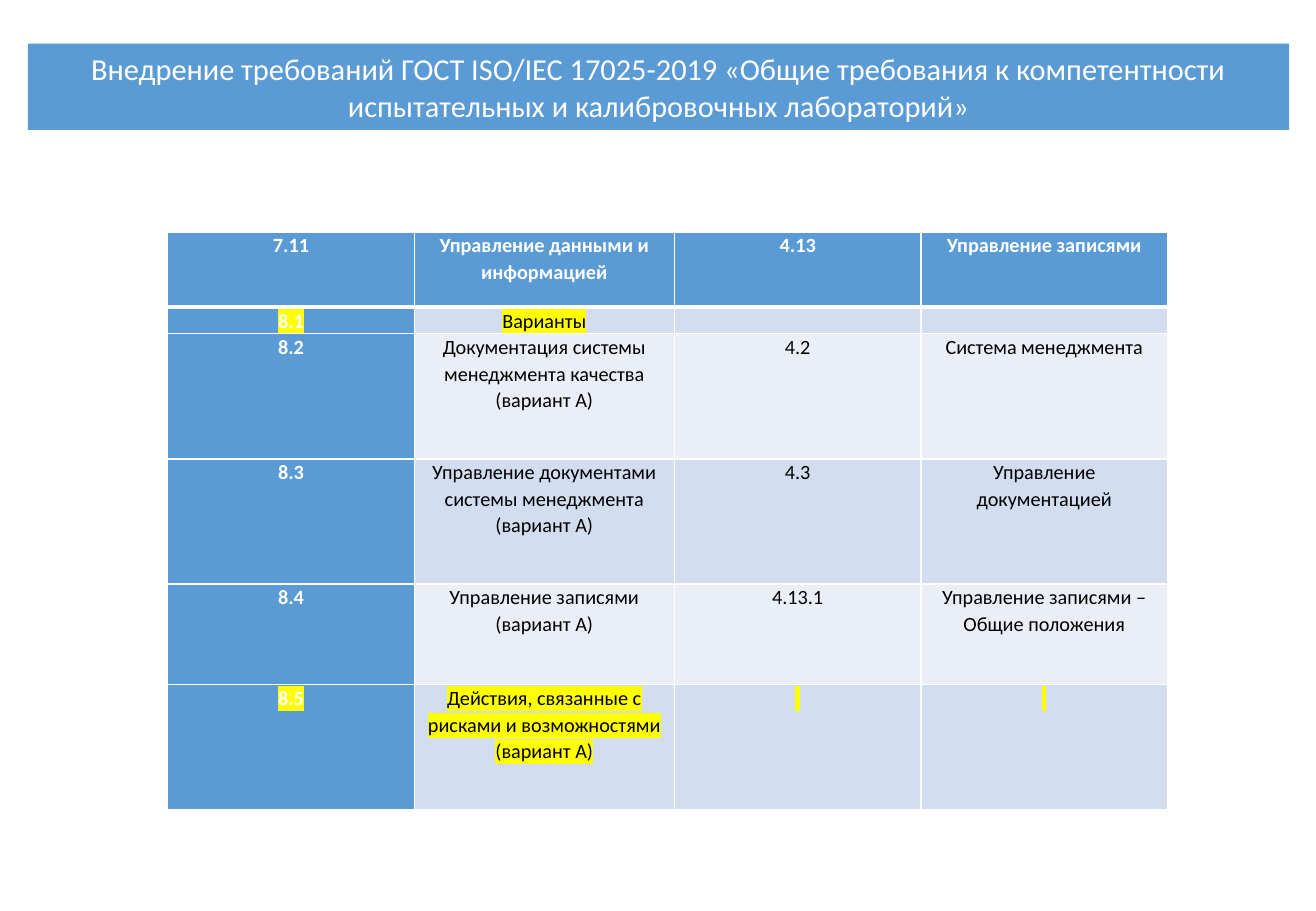
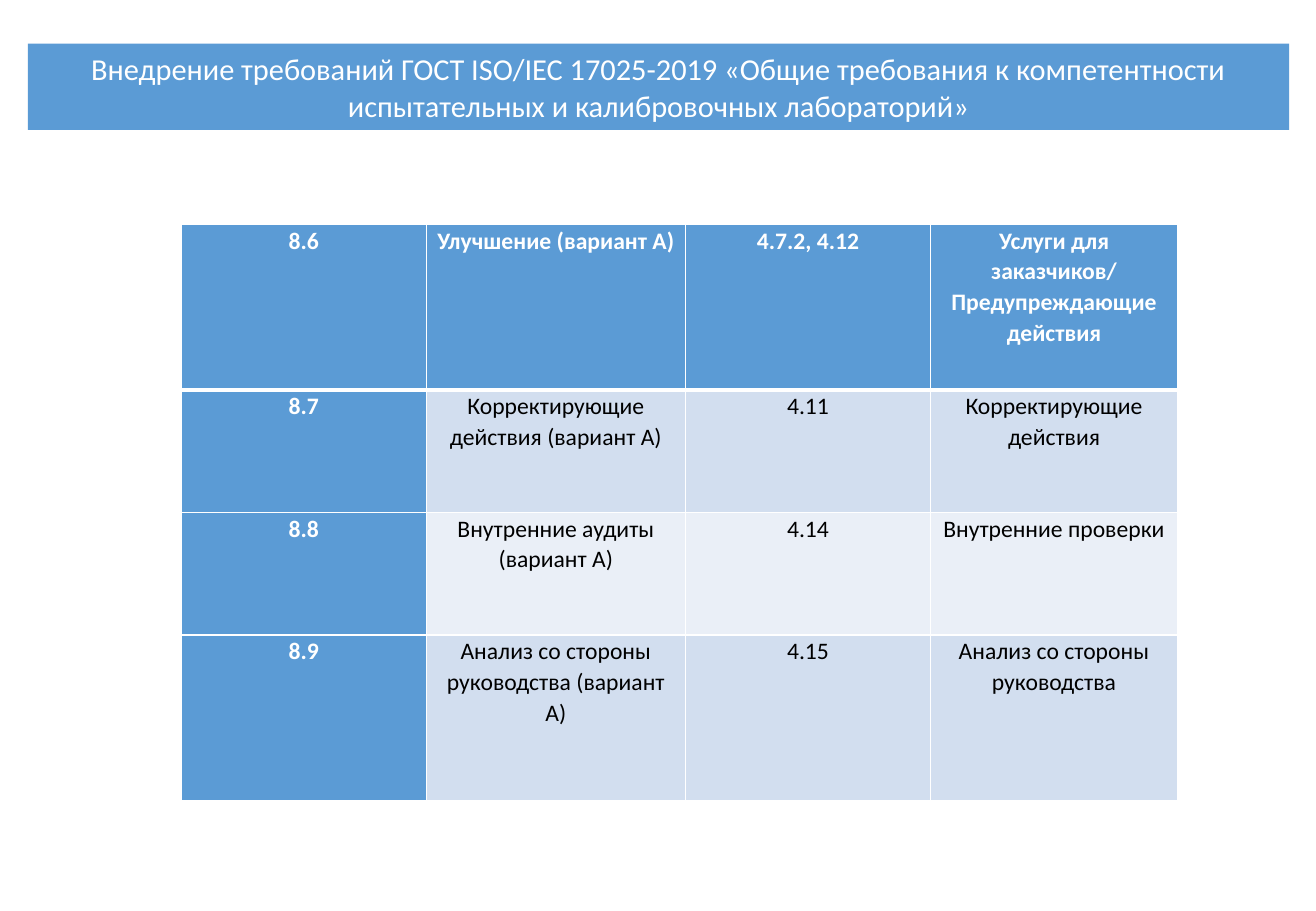
from lxml.etree import SubElement
from pptx import Presentation
from pptx.dml.color import RGBColor
from pptx.enum.text import MSO_ANCHOR, MSO_AUTO_SIZE, PP_ALIGN
from pptx.oxml.ns import qn
from pptx.util import Emu, Pt

PX = 9144
FONT = "Calibri"
BLUE = RGBColor(0x5B, 0x9B, 0xD5)
DARK_BAND = RGBColor(0xD2, 0xDE, 0xEF)
LIGHT_BAND = RGBColor(0xEA, 0xEF, 0xF7)
WHITE = RGBColor(0xFF, 0xFF, 0xFF)
BLACK = RGBColor(0x00, 0x00, 0x00)
YELLOW = RGBColor(0xFF, 0xFF, 0x00)

TITLE = (
    "Внедрение требований ГОСТ ISO/IEC 17025-2019 «Общие требования к "
    "компетентности испытательных и калибровочных лабораторий»"
)

MANAGEMENT_ROWS = [
    ("7.11", "Управление данными и информацией", "4.13", "Управление записями"),
    ("8.1", "Варианты", "", ""),
    ("8.2", "Документация системы менеджмента качества (вариант А)", "4.2",
     "Система менеджмента"),
    ("8.3", "Управление документами системы менеджмента (вариант А)", "4.3",
     "Управление документацией"),
    ("8.4", "Управление записями (вариант А)", "4.13.1",
     "Управление записями – Общие положения"),
    ("8.5", "Действия, связанные с рисками и возможностями (вариант А)", " ", " "),
]

IMPROVEMENT_ROWS = [
    ("8.6", "Улучшение (вариант А)", "4.7.2, 4.12",
     "Услуги для заказчиков/\nПредупреждающие действия"),
    ("8.7", "Корректирующие действия (вариант А)", "4.11", "Корректирующие действия"),
    ("8.8", "Внутренние аудиты (вариант А)", "4.14", "Внутренние проверки"),
    ("8.9", "Анализ со стороны руководства (вариант А)", "4.15",
     "Анализ со стороны руководства"),
]


def px(length):
    return Emu(length * PX)


def add_color(parent, tag, color):
    SubElement(SubElement(parent, qn(tag)), qn("a:srgbClr"), val=str(color))


class Deck:
    def __init__(self, width, height):
        self.presentation = Presentation()
        self.presentation.slide_width = px(width)
        self.presentation.slide_height = px(height)
        self.page = None

    def add_page(self, title):
        layout = self.presentation.slide_layouts.get_by_name("Title Only")
        self.page = self.presentation.slides.add_slide(layout)
        box = self.page.shapes.title
        box.left, box.top, box.width, box.height = map(px, (23, 36, 1038, 71))
        box.fill.solid()
        box.fill.fore_color.rgb = BLUE
        frame = box.text_frame
        frame.text = title
        frame.word_wrap = True
        frame.auto_size = MSO_AUTO_SIZE.NONE
        frame.vertical_anchor = MSO_ANCHOR.MIDDLE
        self.style_paragraph(frame.paragraphs[0], 18, WHITE, False)

    def style_paragraph(self, para, size, color, bold):
        para.alignment = PP_ALIGN.CENTER
        para.font.name = FONT
        para.font.size = Pt(size)
        para.font.bold = bold
        para.font.color.rgb = color

    def add_borders(self, cell, row):
        widths = {"L": 1, "R": 1, "T": 3 if row == 1 else 1, "B": 3 if row == 0 else 1}
        properties = cell._tc.get_or_add_tcPr()
        for side, width in widths.items():
            line = SubElement(properties, qn(f"a:ln{side}"), w=str(Pt(width)))
            add_color(line, "a:solidFill", WHITE)

    def fill_cell(self, cell, text, row, column, size, inset, marked):
        heading = row == 0 or column == 0
        self.add_borders(cell, row)
        cell.fill.solid()
        band = DARK_BAND if row % 2 else LIGHT_BAND
        cell.fill.fore_color.rgb = BLUE if heading else band
        cell.margin_left = cell.margin_right = px(inset)
        cell.margin_top = cell.margin_bottom = 0
        cell.text_frame.text = text
        for para in cell.text_frame.paragraphs:
            self.style_paragraph(para, size, WHITE if heading else BLACK, heading)
            para.line_spacing = 1.07
            if not para.runs:
                SubElement(para._p, qn("a:endParaRPr"), sz=str(size * 100))
            if marked:
                for span in para.runs:
                    add_color(span._r.get_or_add_rPr(), "a:highlight", YELLOW)

    def add_table(self, left, top, widths, heights, rows, size, inset, marked=()):
        table = self.page.shapes.add_table(
            len(rows), len(widths), px(left), px(top), px(sum(widths)), px(sum(heights))
        ).table
        table.first_col = True
        for column, width in zip(table.columns, widths):
            column.width = px(width)
        for row, height in zip(table.rows, heights):
            row.height = px(height)
        for row, texts in enumerate(rows):
            for column, text in enumerate(texts):
                self.fill_cell(table.cell(row, column), text, row, column,
                               size, inset, texts[0] in marked)


def main():
    deck = Deck(1083, 750)
    deck.add_page(TITLE)
    deck.add_table(138, 191, (203, 214, 203, 203), (62, 21, 103, 103, 83, 103),
                   MANAGEMENT_ROWS, 12, 6, marked=("8.1", "8.5"))
    deck.add_page(TITLE)
    deck.add_table(149, 185, (202, 213, 202, 203), (136, 101, 101, 136),
                   IMPROVEMENT_ROWS, 14, 7)
    deck.presentation.save("out.pptx")


if __name__ == "__main__":
    main()
